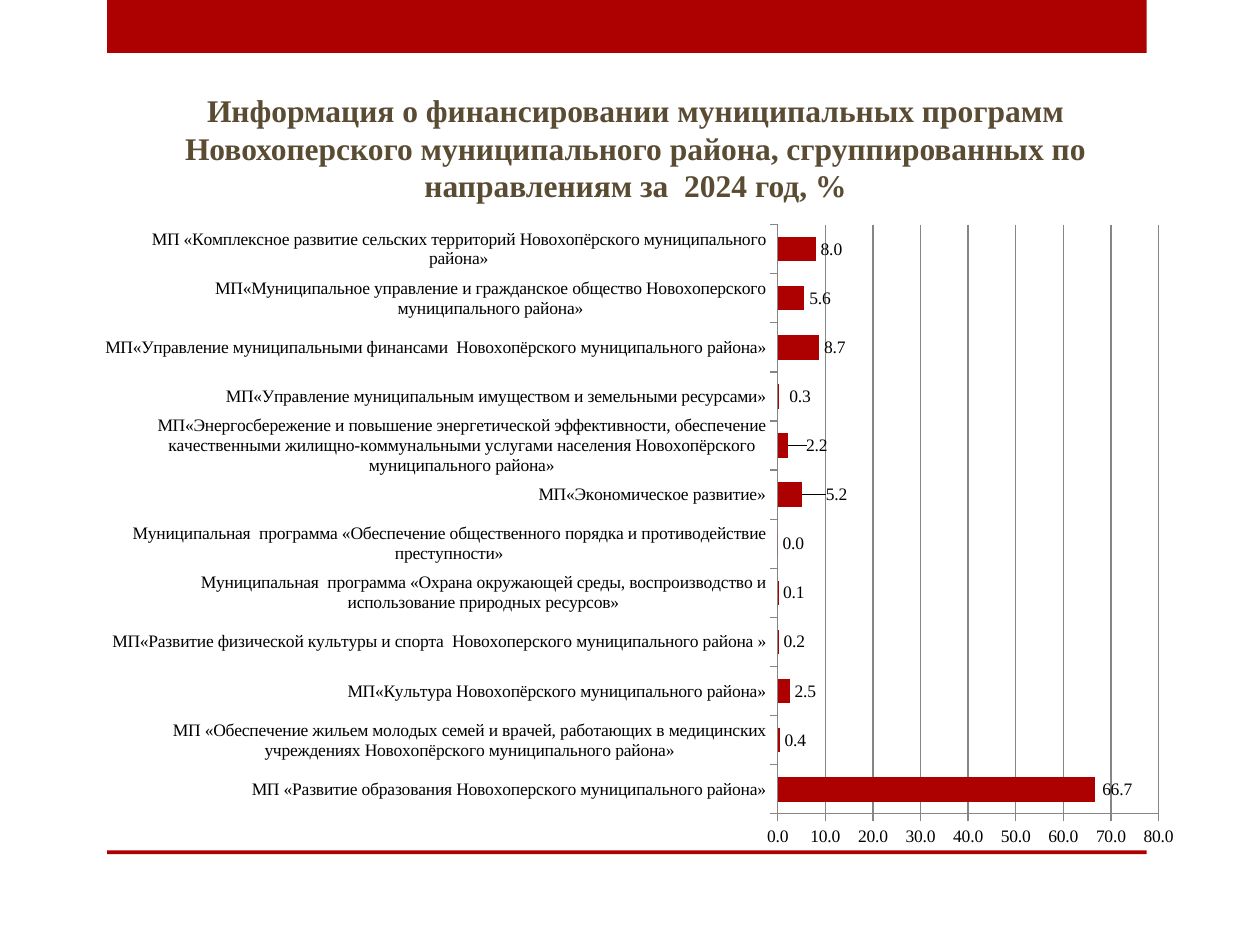
from lxml.etree import fromstring
from pptx import Presentation
from pptx.chart.data import CategoryChartData
from pptx.dml.color import RGBColor
from pptx.enum.chart import XL_CHART_TYPE, XL_LABEL_POSITION, XL_TICK_MARK
from pptx.enum.shapes import MSO_SHAPE
from pptx.enum.text import MSO_ANCHOR, PP_ALIGN
from pptx.oxml.ns import nsdecls
from pptx.util import Inches, Pt

COLORS = {"red": "AD0101", "brown": "5A4B33", "black": "000000", "grey": "868686"}
FONT = "Times New Roman"
TITLE = ("Информация о финансировании муниципальных программ Новохоперского "
         "муниципального района, сгруппированных по направлениям за  2024 год, %")
# Listed from the bottom bar to the top bar
PROGRAMS = [
    ("МП «Развитие образования Новохоперского муниципального района»", 66.7),
    ("МП «Обеспечение жильем молодых семей и врачей, работающих в медицинских "
     "учреждениях Новохопёрского муниципального района»", 0.4),
    ("МП«Культура Новохопёрского муниципального района»", 2.5),
    ("МП«Развитие физической культуры и спорта  Новохоперского муниципального района »", 0.2),
    ("Муниципальная  программа «Охрана окружающей среды, воспроизводство и "
     "использование природных ресурсов»", 0.1),
    ("Муниципальная  программа «Обеспечение общественного порядка и "
     "противодействие преступности»", 0),
    ("МП«Экономическое развитие»", 5.2),
    ("МП«Энергосбережение и повышение энергетической эффективности, обеспечение "
     "качественными жилищно-коммунальными услугами населения Новохопёрского "
     "муниципального района»", 2.2),
    ("МП«Управление муниципальным имуществом и земельными ресурсами»", 0.3),
    ("МП«Управление муниципальными финансами  Новохопёрского муниципального района»", 8.7),
    ("МП«Муниципальное управление и гражданское общество Новохоперского "
     "муниципального района»", 5.6),
    ("МП «Комплексное развитие сельских территорий Новохопёрского "
     "муниципального района»", 8.0),
]
# Labels moved right, as a share of the chart width
LABEL_SHIFTS = {0: 0.002, 6: 0.017, 7: 0.012, 8: 0.005}


def color(name):
    return RGBColor.from_string(COLORS[name])


def set_font(font, size, name, bold=False):
    values = {"name": FONT, "size": Pt(size), "bold": bold}
    for key, value in values.items():
        setattr(font, key, value)
    font.color.rgb = color(name)


def manual_layout(**values):
    items = "".join(f'<c:{key} val="{value}"/>' for key, value in values.items())
    return fromstring(f'<c:layout {nsdecls("c")}><c:manualLayout>{items}'
                      '</c:manualLayout></c:layout>')


def add_band(page, box):
    band = page.shapes.add_shape(MSO_SHAPE.RECTANGLE, *map(Inches, box))
    band.shadow.inherit = False
    band.fill.solid()
    band.fill.fore_color.rgb = color("red")
    band.line.fill.background()


def add_title(page, box):
    title = page.shapes.title
    for key, value in zip(("left", "top", "width", "height"), box):
        setattr(title, key, Inches(value))
    frame = title.text_frame
    frame.word_wrap = True
    frame.vertical_anchor = MSO_ANCHOR.TOP
    para = frame.paragraphs[0]
    para.alignment = PP_ALIGN.CENTER
    span = para.add_run()
    span.text = TITLE
    set_font(span.font, 18, "brown", bold=True)


def format_labels(series):
    labels = series.data_labels
    values = {"show_value": True, "number_format": "0.0",
              "number_format_is_linked": False,
              "position": XL_LABEL_POSITION.OUTSIDE_END}
    for key, value in values.items():
        setattr(labels, key, value)
    set_font(labels.font, 10, "black")
    for index, shift in LABEL_SHIFTS.items():
        label = series.points[index].data_label
        label.position = XL_LABEL_POSITION.OUTSIDE_END
        set_font(label.font, 10, "black")
        number = series._element.xpath(f'c:dLbls/c:dLbl/c:idx[@val="{index}"]')[0]
        number.addnext(manual_layout(x=shift, y=0))
        number.getnext().addnext(fromstring(
            f'<c:numFmt {nsdecls("c")} formatCode="0.0" sourceLinked="0"/>'))


def add_programs_chart(page, box):
    data = CategoryChartData(number_format="0.0")
    data.categories = [name for name, _ in PROGRAMS]
    data.add_series("Series 1", [share for _, share in PROGRAMS])
    chart = page.shapes.add_chart(
        XL_CHART_TYPE.BAR_CLUSTERED, *map(Inches, box), data).chart
    chart.has_legend = chart.has_title = False
    set_font(chart.font, 10, "black")

    # Axes and gridlines
    scale = chart.value_axis
    values = {"minimum_scale": 0, "maximum_scale": 80, "major_unit": 10,
              "has_major_gridlines": True}
    for key, value in values.items():
        setattr(scale, key, value)
    scale.tick_labels.number_format = "0.0"
    scale.tick_labels.number_format_is_linked = False
    for axis in (scale, chart.category_axis):
        axis.major_tick_mark = XL_TICK_MARK.OUTSIDE
    for item in (scale, chart.category_axis, scale.major_gridlines):
        item.format.line.color.rgb = color("grey")
        item.format.line.width = Pt(0.75)

    # Bars and labels
    plot = chart.plots[0]
    plot.gap_width = 100
    plot.vary_by_categories = False
    series = plot.series[0]
    series.invert_if_negative = False
    series.format.fill.solid()
    series.format.fill.fore_color.rgb = color("red")
    format_labels(series)

    # Plot position inside the chart
    area = chart._chartSpace.chart.plotArea
    for old in area.xpath("c:layout"):
        area.remove(old)
    area.insert(0, manual_layout(layoutTarget="inner", xMode="edge", yMode="edge",
                                 x=0.617, y=0.02, w=0.349, h=0.91))


def main():
    deck = Presentation()
    deck.slide_width, deck.slide_height = Inches(10), Inches(7.5)
    page = deck.slides.add_slide(deck.slide_layouts[5])
    add_band(page, (0.85, 0, 8.25, 0.42))
    add_band(page, (0.85, 6.75, 8.25, 0.03))
    add_title(page, (0.83, 0.67, 8.43, 1.01))
    add_programs_chart(page, (0.83, 1.68, 8.66, 5.14))
    deck.save("out.pptx")


if __name__ == "__main__":
    main()
